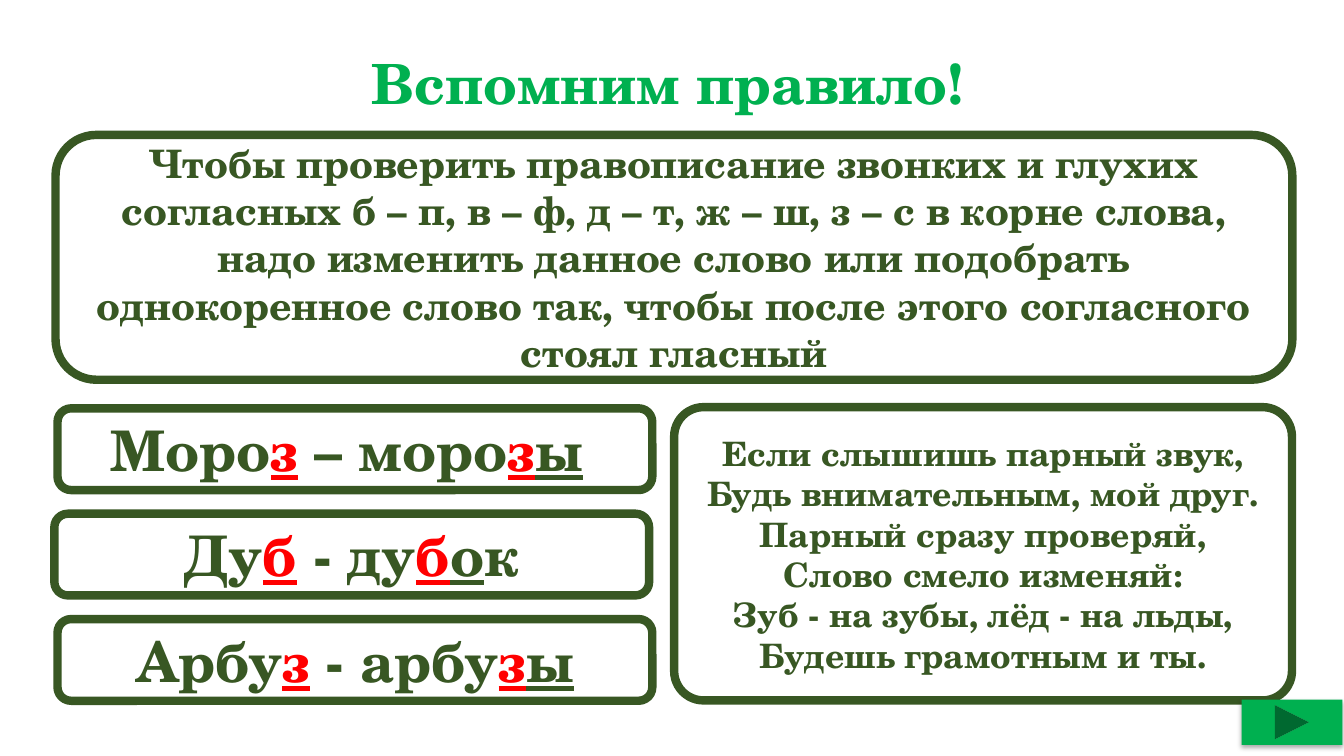
"""Build a Russian spelling rule slide with examples and a rhyme."""
from lxml.etree import SubElement
from pptx import Presentation
from pptx.dml.color import RGBColor
from pptx.enum.shapes import MSO_SHAPE
from pptx.enum.text import MSO_ANCHOR, PP_ALIGN
from pptx.oxml.ns import qn
from pptx.util import Cm, Pt

COLORS = {"title": "00B050", "text": "385723", "letter": "FF0000",
          "panel": "FFFFFF", "shadow": "000000"}
FONT = "TeX Gyre Schola"


def add_span(para, text, size, color="text", underline=False):
    span = para.add_run()
    span.text = text
    span.font.name = FONT
    span.font.size = Pt(size)
    span.font.bold = True
    span.font.underline = underline
    span.font.color.rgb = RGBColor.from_string(COLORS[color])


def add_panel(page, left, top, width, height):
    panel = page.shapes.add_shape(MSO_SHAPE.ROUNDED_RECTANGLE,
                                  Cm(left), Cm(top), Cm(width), Cm(height))
    panel.shadow.inherit = False
    panel.fill.solid()
    panel.fill.fore_color.rgb = RGBColor.from_string(COLORS["panel"])
    panel.line.color.rgb = RGBColor.from_string(COLORS["text"])
    panel.line.width = Pt(6)
    panel.text_frame.word_wrap = True
    panel.text_frame.vertical_anchor = MSO_ANCHOR.MIDDLE
    panel.text_frame.paragraphs[0].alignment = PP_ALIGN.CENTER
    return panel


deck = Presentation()
deck.slide_width = Cm(33.87)
deck.slide_height = Cm(19.05)
page = deck.slides.add_slide(deck.slide_layouts[6])

title = page.shapes.add_textbox(Cm(1.09), Cm(1.27), Cm(31.47), Cm(1.83))
title.text_frame.word_wrap = True
title.text_frame.vertical_anchor = MSO_ANCHOR.MIDDLE
para = title.text_frame.paragraphs[0]
para.alignment = PP_ALIGN.CENTER
para.line_spacing = 0.9
add_span(para, "Вспомним правило!", 39.6, "title")

rule = add_panel(page, 1.4, 3.4, 31.17, 6.17)
add_span(rule.text_frame.paragraphs[0],
         "Чтобы проверить правописание звонких и глухих согласных "
         "б – п, в – ф, д – т, ж – ш, з – с в корне слова, надо изменить "
         "данное слово или подобрать однокоренное слово так, чтобы после "
         "этого согласного стоял гласный", 28)

examples = [
    (1.45, "Моро", "з", " – моро", "ы", " "),
    (1.37, "Ду", "б", " - ду", "о", "к"),
    (1.45, "Арбу", "з", " - арбу", "ы", ""),
]
for row, (left, start, letter, middle, vowel, ending) in enumerate(examples):
    example = add_panel(page, left, 10.29 + row * 2.655, 14.99, 2.06)
    para = example.text_frame.paragraphs[0]
    add_span(para, start, 40)
    add_span(para, letter, 40, "letter", True)
    add_span(para, middle, 40)
    add_span(para, letter, 40, "letter", True)
    add_span(para, vowel, 40, underline=True)
    if ending:
        add_span(para, ending, 40)

rhyme = add_panel(page, 16.99, 10.26, 15.57, 7.39)
rhyme.adjustments[0] = 0.1
verses = ["Если слышишь парный звук,", "Будь внимательным, мой друг.",
          "Парный сразу проверяй,", "Слово смело изменяй:",
          "Зуб - на зубы, лёд - на льды,", "Будешь грамотным и ты."]
for index, verse in enumerate(verses):
    frame = rhyme.text_frame
    para = frame.add_paragraph() if index else frame.paragraphs[0]
    para.alignment = PP_ALIGN.CENTER
    add_span(para, verse, 24)

button = page.shapes.add_shape(MSO_SHAPE.ACTION_BUTTON_FORWARD_OR_NEXT,
                               Cm(31.29), Cm(17.63), Cm(2.54), Cm(1.14))
button.fill.solid()
button.fill.fore_color.rgb = RGBColor.from_string(COLORS["title"])
button.line.fill.background()
button.shadow.inherit = False
effects = button.fill._xPr.find(qn("a:effectLst"))
shadow = SubElement(effects, qn("a:outerShdw"), blurRad=str(Pt(3.5)),
                    dist=str(Pt(2.2)), dir="5400000", algn="ctr", rotWithShape="0")
shade = SubElement(shadow, qn("a:srgbClr"), val=COLORS["shadow"])
SubElement(shade, qn("a:alpha"), val="32000")

deck.save("out.pptx")
